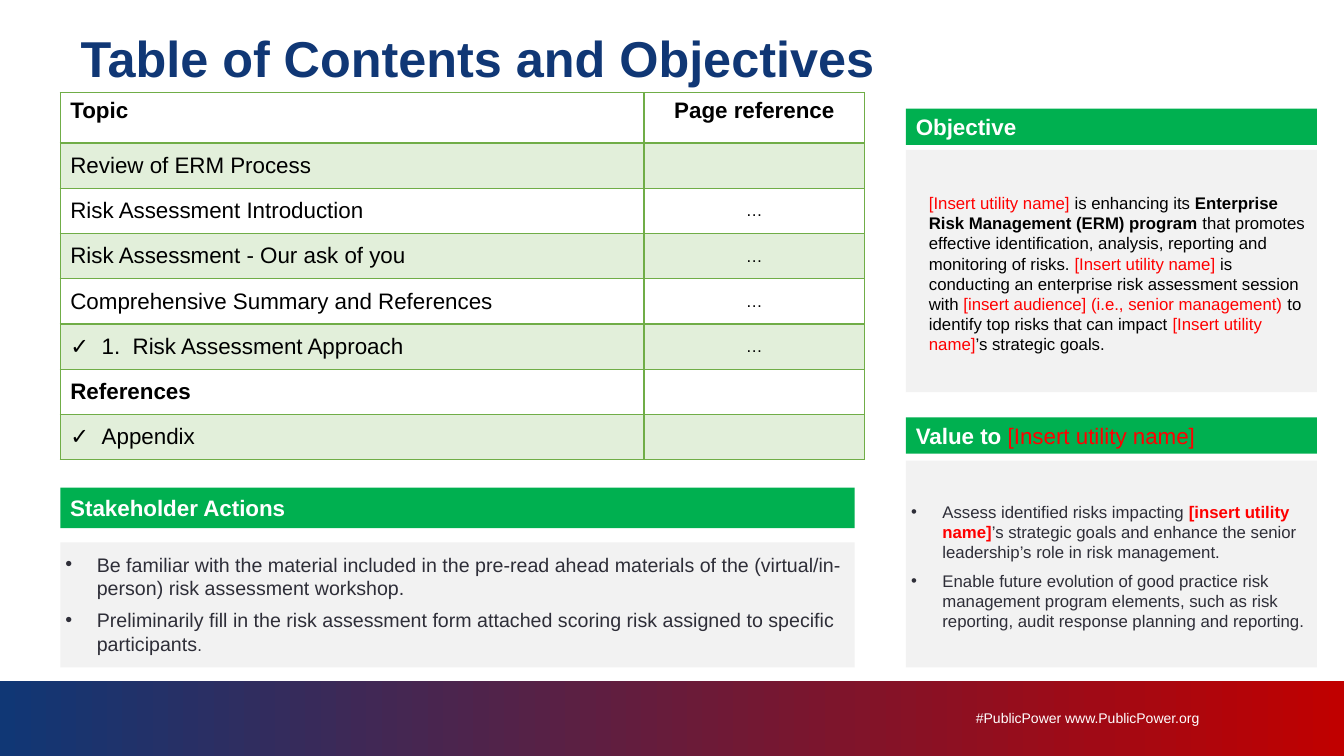
import pptx
import pptx.dml.color
import pptx.enum.shapes
import pptx.enum.text
import pptx.oxml
import pptx.oxml.ns
import pptx.util
from lxml import etree

Cm = pptx.util.Cm
Pt = pptx.util.Pt
ALIGN = pptx.enum.text.PP_ALIGN
ANCHOR = pptx.enum.text.MSO_ANCHOR

COLORS = {
    "navy": "103775", "crimson": "C00000", "green": "00B050", "grey": "F2F2F2",
    "red": "FF0000", "black": "000000", "white": "FFFFFF", "slate": "2E2E38",
    "border": "70AD47", "band": "E2EFDA",
}
LEFT, LEFT_WIDTH = 1.52, 20.02
RIGHT, RIGHT_WIDTH = 22.83, 10.36
HANGING = 0.79
NUMBER_TAB = 1.57
RED = {"color": "red"}
BOLD = {"bold": True}

TOPICS = [
    ("Topic", "Page reference"),
    ("Review of ERM Process", ""),
    ("Risk Assessment Introduction", "…"),
    ("Risk Assessment - Our ask of you", "…"),
    ("Comprehensive Summary and References", "…"),
    ("1.\tRisk Assessment Approach", "…"),
    ("References", ""),
    ("Appendix", ""),
]
BOLD_TOPICS = ("Topic", "References")
CHECKED_TOPICS = ("1.\tRisk Assessment Approach", "Appendix")

OBJECTIVE = [
    ("[Insert utility name] ", RED),
    ("is enhancing its ", {}),
    ("Enterprise Risk Management (ERM) program ", BOLD),
    ("that promotes effective identification, analysis, reporting and monitoring of risks. ", {}),
    ("[Insert utility name] ", RED),
    ("is conducting an enterprise risk assessment session with ", {}),
    ("[insert audience] (i.e., senior management)", RED),
    (" to identify top risks that can impact ", {}),
    ("[Insert utility name]", RED),
    ("’s strategic goals.", {}),
]
ACTIONS = [
    [("Be familiar with the material included in the pre-read ahead materials of the "
      "(virtual/in-person) risk assessment workshop.", {})],
    [("Preliminarily fill in the risk assessment form attached scoring risk assigned to "
      "specific participants", {}), (".", {"size": 12})],
]
VALUES = [
    [("Assess identified risks impacting ", {}),
     ("[insert utility name]", {"color": "red", "bold": True}),
     ("’s strategic goals and enhance the senior leadership’s role in risk management.", {})],
    [("Enable future evolution of good practice risk management program elements, such as "
      "risk reporting, audit response planning and reporting.", {})],
]


def rgb(name):
    """Return the named colour."""
    return pptx.dml.color.RGBColor.from_string(COLORS[name])


def apply(target, values):
    """Set each attribute in values on the target."""
    for name, value in values.items():
        setattr(target, name, value)


def add_element(parent, tag, **attributes):
    """Append a drawing element to the parent and return it."""
    return etree.SubElement(parent, pptx.oxml.ns.qn(tag), attributes)


def write_runs(paragraph, runs, size, color, bold=False):
    """Write runs, each with its own changes to the base format."""
    for text, changes in runs:
        look = {"size": size, "color": color, "bold": bold, **changes}
        run = paragraph.add_run()
        run.text = text
        apply(run.font, {"name": "Arial", "size": Pt(look["size"]), "bold": look["bold"]})
        run.font.color.rgb = rgb(look["color"])


def set_indent(paragraph, margin, indent=0):
    """Indent a paragraph and its first line, in centimetres."""
    properties = paragraph._p.get_or_add_pPr()
    properties.set("marL", str(Cm(margin)))
    properties.set("indent", str(Cm(indent)))
    return properties


def add_bullet(paragraph, character, color):
    """Give a paragraph a hanging bullet."""
    properties = set_indent(paragraph, HANGING, -HANGING)
    bullet_color = add_element(properties, "a:buClr")
    add_element(bullet_color, "a:srgbClr", val=COLORS[color])
    add_element(properties, "a:buFont", typeface="Arial")
    add_element(properties, "a:buChar", char=character)
    return properties


def set_frame(shape, anchor, left=0.25, top=0.13, right=0.25, bottom=0.13):
    """Set the wrapping, anchor and insets of a shape's text."""
    apply(shape.text_frame, {
        "word_wrap": True, "auto_size": pptx.enum.text.MSO_AUTO_SIZE.NONE,
        "vertical_anchor": anchor, "margin_left": Cm(left), "margin_top": Cm(top),
        "margin_right": Cm(right), "margin_bottom": Cm(bottom)})
    return shape.text_frame


def place(shape, left, top, width, height):
    """Move and size a shape, in centimetres."""
    apply(shape, {"left": Cm(left), "top": Cm(top), "width": Cm(width), "height": Cm(height)})


def add_panel(slide, left, top, width, height, color=None):
    """Add a rectangle without line or shadow."""
    shape = slide.shapes.add_shape(
        pptx.enum.shapes.MSO_SHAPE.RECTANGLE, Cm(left), Cm(top), Cm(width), Cm(height))
    shape.shadow.inherit = False
    shape.line.fill.background()
    if color:
        shape.fill.solid()
        shape.fill.fore_color.rgb = rgb(color)
    return shape


def add_heading(slide, runs, left, top, width, height):
    """Add a green heading bar."""
    bar = add_panel(slide, left, top, width, height, "green")
    paragraph = set_frame(bar, ANCHOR.MIDDLE).paragraphs[0]
    paragraph.alignment = ALIGN.LEFT
    write_runs(paragraph, runs, 16, "white", True)


def fill_list(placeholder, items, size, anchor, position):
    """Turn a body placeholder into a grey bulleted panel."""
    place(placeholder, *position)
    placeholder.fill.solid()
    placeholder.fill.fore_color.rgb = rgb("grey")
    frame = set_frame(placeholder, anchor, 0.13, 0.25, 0.13, 0.13)
    for index, runs in enumerate(items):
        paragraph = frame.add_paragraph() if index else frame.paragraphs[0]
        apply(paragraph, {"space_before": Pt(0), "space_after": Pt(6), "alignment": ALIGN.LEFT})
        add_bullet(paragraph, "•", "slate")
        write_runs(paragraph, runs, size, "slate")


def add_footer(slide):
    """Add the gradient band and its caption."""
    band = add_panel(slide, 0, 17.15, 33.87, 1.9)
    band.fill.gradient()
    band.fill.gradient_angle = 180
    for stop, color in zip(band.fill.gradient_stops, ("crimson", "navy")):
        stop.color.rgb = rgb(color)
    caption = slide.shapes.add_textbox(Cm(23.29), Cm(17.7), Cm(6.93), Cm(0.76))
    paragraph = set_frame(caption, ANCHOR.MIDDLE, 0, 0, 0, 0).paragraphs[0]
    paragraph.alignment = ALIGN.RIGHT
    write_runs(paragraph, [("#PublicPower www.PublicPower.org", {})], 10, "white")


def format_cell(cell, row):
    """Draw a cell's borders and its fill."""
    thick = {"a:lnB": 0, "a:lnT": 1}
    properties = cell._tc.get_or_add_tcPr()
    for tag in ("a:lnL", "a:lnR", "a:lnT", "a:lnB"):
        width = 2 if thick.get(tag) == row else 1
        line = add_element(properties, tag, w=str(Pt(width)))
        add_element(add_element(line, "a:solidFill"), "a:srgbClr", val=COLORS["border"])
    if row % 2:
        cell.fill.solid()
        cell.fill.fore_color.rgb = rgb("band")
    else:
        cell.fill.background()
    cell.vertical_anchor = ANCHOR.MIDDLE if row else ANCHOR.TOP


def add_contents_table(slide):
    """Add the table of topics and pages."""
    table = slide.shapes.add_table(
        len(TOPICS), 2, Cm(LEFT), Cm(2.34), Cm(20.27), Cm(9.25)).table
    apply(table, {"first_row": False, "horz_banding": False})
    for column, width in zip(table.columns, (14.71, 5.56)):
        column.width = Cm(width)
    for row, texts in enumerate(TOPICS):
        table.rows[row].height = Cm(1.14 if row else 1.27)
        for column, text in enumerate(texts):
            cell = table.cell(row, column)
            format_cell(cell, row)
            paragraph = cell.text_frame.paragraphs[0]
            paragraph.alignment = ALIGN.CENTER if column else ALIGN.LEFT
            if text in CHECKED_TOPICS:
                properties = add_bullet(paragraph, "✓", "black")
                tabs = add_element(properties, "a:tabLst")
                add_element(tabs, "a:tab", pos=str(Cm(NUMBER_TAB)), algn="l")
            if text:
                size = 12 if text == "…" else 16
                write_runs(paragraph, [(text, {})], size, "black",
                           row == 0 or text in BOLD_TOPICS)


def main():
    """Build the slide and save it."""
    presentation = pptx.Presentation()
    apply(presentation, {"slide_width": Cm(33.87), "slide_height": Cm(19.05)})
    slide = presentation.slides.add_slide(presentation.slide_layouts[3])
    title, actions, values = slide.placeholders
    add_footer(slide)
    place(title, 2.03, 0.86, 29.87, 1.85)
    heading = set_frame(title, ANCHOR.TOP, 0, 0, 0, 0).paragraphs[0]
    apply(heading, {"alignment": ALIGN.LEFT, "line_spacing": Pt(38)})
    write_runs(heading, [("Table of Contents and Objectives", {})], 36, "navy", True)
    add_contents_table(slide)
    add_heading(slide, [("Stakeholder Actions", {})], LEFT, 12.29, LEFT_WIDTH, 1.02)
    fill_list(actions, ACTIONS, 14, ANCHOR.TOP, (LEFT, 13.67, LEFT_WIDTH, 3.15))
    add_heading(slide, [("Objective", {})], RIGHT, 2.74, RIGHT_WIDTH, 0.91)
    panel = add_panel(slide, RIGHT, 3.78, RIGHT_WIDTH, 6.1, "grey")
    objective = set_frame(panel, ANCHOR.MIDDLE, 0.25, 0.25, 0.13, 0.13).paragraphs[0]
    apply(objective, {"alignment": ALIGN.LEFT, "space_after": Pt(6)})
    set_indent(objective, 0.33)
    write_runs(objective, OBJECTIVE, 12, "black")
    add_heading(slide, [("Value to ", {}), ("[Insert utility name]", {"color": "red", "bold": False})],
                RIGHT, 10.52, RIGHT_WIDTH, 0.91)
    fill_list(values, VALUES, 12, ANCHOR.MIDDLE, (RIGHT, 11.61, RIGHT_WIDTH, 5.21))
    presentation.save("out.pptx")


if __name__ == "__main__":
    main()
